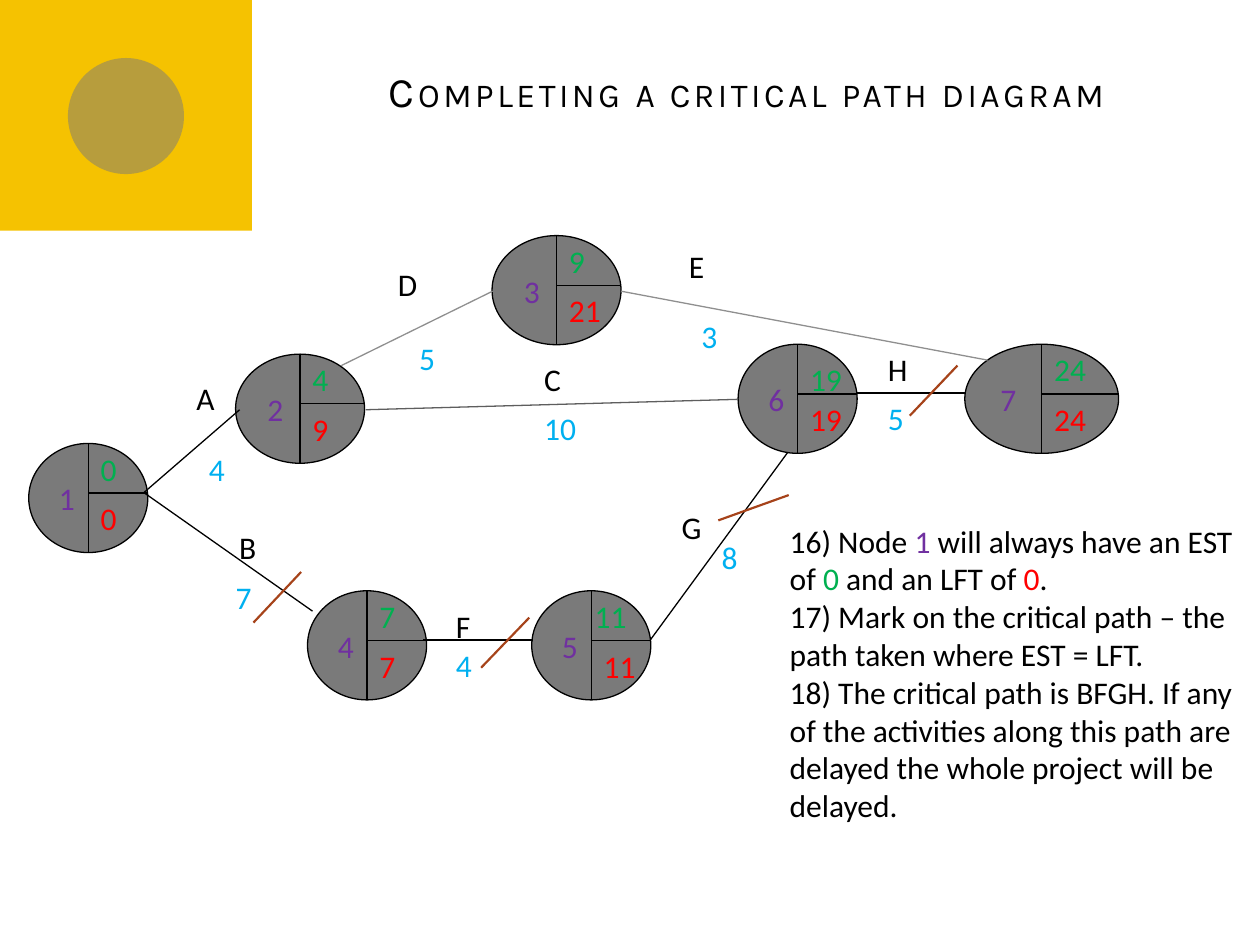
from lxml import etree
from pptx import Presentation
from pptx.dml.color import RGBColor
from pptx.enum.shapes import MSO_CONNECTOR, MSO_SHAPE
from pptx.enum.text import MSO_ANCHOR, MSO_AUTO_SIZE, PP_ALIGN
from pptx.oxml.ns import qn
from pptx.util import Cm, Pt

COLORS = {
    "yellow": "F5C201", "node": "7A7A7A", "black": "000000", "number": "7030A0",
    "est": "00B050", "lft": "FF0000", "duration": "00B0F0", "critical": "A6431A",
    "dark_grey": "5E5E5E", "light_grey": "8F8F8F",
}

# number, left, top, width, EST, LFT, EST shift
NODES = [
    ("1", 0.58, 8.94, 2.4, "0", "0", (0, 0)),
    ("2", 4.75, 7.14, 2.6, "4", "9", (0, 0)),
    ("3", 9.92, 4.75, 2.6, "9", "21", (0, 0)),
    ("4", 6.2, 11.91, 2.4, "7", "7", (0, 0)),
    ("5", 10.72, 11.91, 2.4, "11", "11", (-0.18, 0)),
    ("6", 14.88, 6.94, 2.4, "19", "19", (0, 0.2)),
    ("7", 19.45, 6.94, 3.1, "24", "24", (0, 0)),
]

# name, name position, duration, duration position, line ends, line colour
ACTIVITIES = [
    ("A", (3.71, 7.52), "4", (3.96, 8.94), (2.9, 9.93, 4.83, 8.26), "black"),
    ("B", (4.57, 10.52), "7", (4.5, 11.53), (2.9, 9.93, 6.3, 12.32), "black"),
    ("C", (10.72, 7.14), "10", (10.72, 8.13), (7.37, 8.26, 14.88, 8.05), "dark_grey"),
    ("D", (7.77, 5.21), "5", (8.2, 6.71), (6.88, 7.37, 9.93, 5.87), "light_grey"),
    ("E", (13.64, 4.85), "3", (13.89, 6.27), (12.52, 5.87, 19.91, 7.26), "light_grey"),
    ("F", (8.94, 12.12), "4", (8.94, 12.9), (8.53, 12.9, 10.74, 12.9), "black"),
    ("G", (13.49, 10.11), "8", (14.3, 10.72), (13.11, 12.9, 15.88, 9.12), "black"),
    ("H", (17.65, 6.93), "5", (17.65, 7.92), (17.27, 7.92, 19.46, 7.92), "black"),
]

CRITICAL_MARKS = [
    (6.07, 11.53, 5.11, 12.55),
    (19.3, 7.37, 18.34, 8.38),
    (10.67, 12.45, 9.7, 13.46),
    (15.9, 9.98, 14.48, 10.49),
]

NOTES = [
    [("16) Node ", "black"), ("1", "number"), (" will always have an EST of ", "black"),
     ("0", "est"), (" and an LFT of ", "black"), ("0", "lft"), (".", "black")],
    [("17) Mark on the critical path – the path taken where EST = LFT.", "black")],
    [("18) The critical path is BFGH. If any of the activities along this path are "
      "delayed the whole project will be delayed.", "black")],
]


def rgb(name):
    return RGBColor.from_string(COLORS[name])


def add_shape(shapes, kind, x, y, w, h, fill, line=None):
    sp = shapes.add_shape(kind, Cm(x), Cm(y), Cm(w), Cm(h))
    sp.shadow.inherit = False
    sp.fill.solid()
    sp.fill.fore_color.rgb = rgb(fill)
    if line:
        sp.line.color.rgb = rgb(line)
        sp.line.width = Pt(0.75)
    else:
        sp.line.fill.background()
    return sp


def add_line(shapes, ends, color="black", width=0.75):
    ln = shapes.add_connector(MSO_CONNECTOR.STRAIGHT, *[Cm(v) for v in ends])
    ln.line.color.rgb = rgb(color)
    ln.line.width = Pt(width)
    etree.SubElement(ln._element.spPr, qn("a:effectLst"))


def add_text(shapes, x, y, w, h, paragraphs):
    tf = shapes.add_textbox(Cm(x), Cm(y), Cm(w), Cm(h)).text_frame
    tf.word_wrap = True
    tf.auto_size = MSO_AUTO_SIZE.SHAPE_TO_FIT_TEXT
    for i, runs in enumerate(paragraphs):
        p = tf.add_paragraph() if i else tf.paragraphs[0]
        p.font.name = "Calibri"
        p.font.size = Pt(18)
        for text, color in runs:
            r = p.add_run()
            r.text = text
            r.font.color.rgb = rgb(color)


def add_label(shapes, x, y, w, text, color):
    add_text(shapes, x, y, w, 1.02, [[(text, color)]])


def add_banner(shapes):
    group = shapes.add_group_shape().shapes
    add_shape(group, MSO_SHAPE.RECTANGLE, 0, 0, 5.08, 4.65, "yellow")
    sp = add_shape(group, MSO_SHAPE.OVAL, 1.37, 1.17, 2.34, 2.34, "node")
    color = sp._element.spPr.find(qn("a:solidFill"))[0]
    etree.SubElement(color, qn("a:alpha"), val="50000")


def add_title(shapes, text):
    tf = shapes.add_textbox(Cm(3.33), Cm(0.53), Cm(21.59), Cm(2.59)).text_frame
    tf.word_wrap = True
    tf.vertical_anchor = MSO_ANCHOR.MIDDLE
    p = tf.paragraphs[0]
    p.alignment = PP_ALIGN.RIGHT
    p.font.name = "Karla"
    p.font.size = Pt(24)
    p.font.color.rgb = rgb("black")
    r = p.add_run()
    r.text = text
    rPr = r._r.get_or_add_rPr()
    rPr.set("cap", "small")
    rPr.set("spc", "200")


def add_node(shapes, number, x, y, w, est, lft, shift):
    h, split = 2.2, 1.0
    mid = x + w / 2
    dx, dy = shift
    group = shapes.add_group_shape().shapes
    add_shape(group, MSO_SHAPE.FLOWCHART_CONNECTOR, x, y, w, h, "node", "black")
    add_line(group, (mid, y, mid, y + h))
    add_line(group, (mid, y + split, x + w, y + split))
    add_label(group, x + 0.15 * w, y + 0.6, 0.75, number, "number")
    add_label(group, mid + dx, y + dy, 1.3, est, "est")
    add_label(group, mid, y + split, 1.3, lft, "lft")


def add_activity(shapes, name, name_at, duration, duration_at, ends, color):
    add_line(shapes, ends, color)
    add_label(shapes, *name_at, 1.24, name, "black")
    add_label(shapes, *duration_at, 0.6 + 0.5 * len(duration), duration, "duration")


def main():
    prs = Presentation()
    prs.slide_width, prs.slide_height = Cm(25.4), Cm(19.05)
    s = prs.slides.add_slide(prs.slide_layouts[6])
    add_banner(s.shapes)
    add_title(s.shapes, "Completing a critical path diagram")
    for node in NODES:
        add_node(s.shapes, *node)
    for activity in ACTIVITIES:
        add_activity(s.shapes, *activity)
    add_text(s.shapes, 15.67, 10.39, 9.96, 6.4, NOTES)
    for ends in CRITICAL_MARKS:
        add_line(s.shapes, ends, "critical", 1.25)
    prs.save("out.pptx")


if __name__ == "__main__":
    main()
